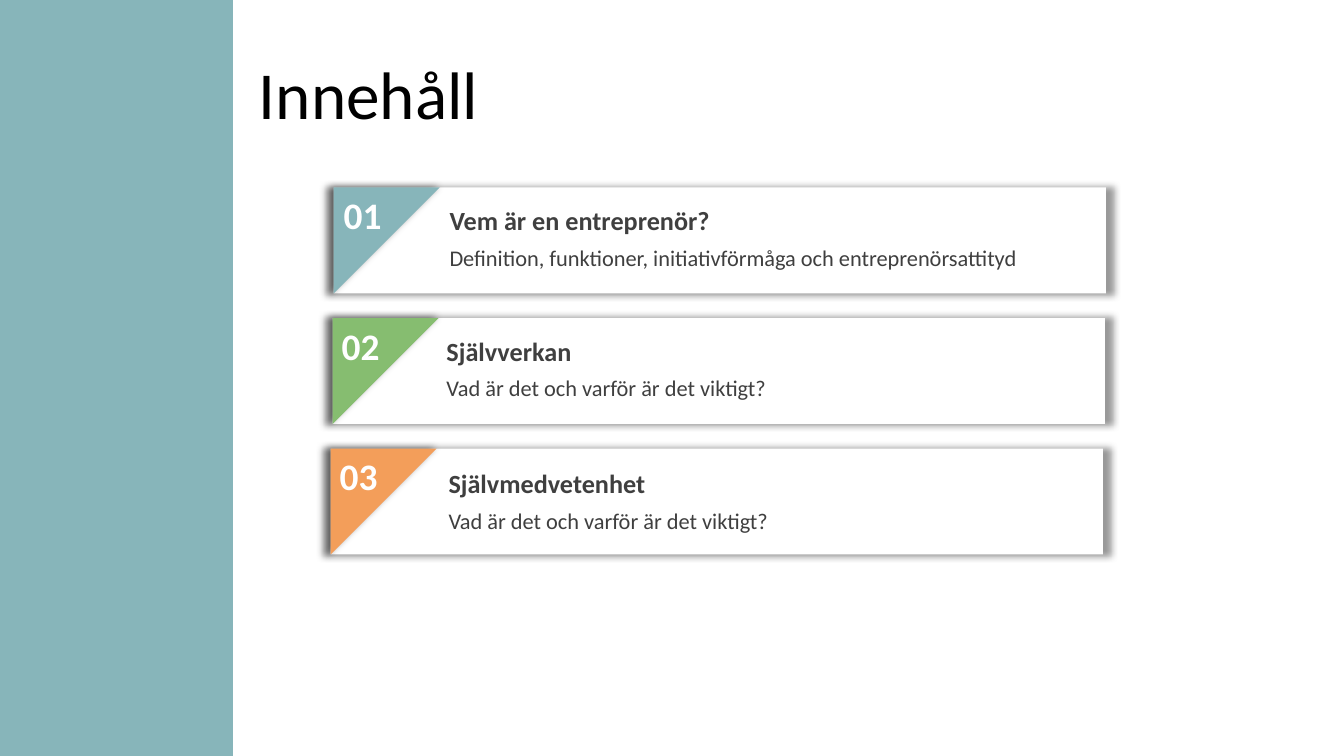
from lxml.etree import SubElement
from pptx import Presentation
from pptx.dml.color import RGBColor
from pptx.enum.shapes import MSO_SHAPE
from pptx.enum.text import MSO_ANCHOR, MSO_AUTO_SIZE
from pptx.oxml.ns import qn
from pptx.util import Inches, Pt

deck = Presentation()
deck.slide_width = Inches(13.33)
deck.slide_height = Inches(7.5)
slide = deck.slides.add_slide(deck.slide_layouts[6])


def add_block(kind, left, top, width, height, color, glow=True):
    block = slide.shapes.add_shape(
        kind, Inches(left), Inches(top), Inches(width), Inches(height))
    block.fill.solid()
    block.fill.fore_color.rgb = RGBColor.from_string(color)
    block.line.fill.background()
    block.shadow.inherit = False
    if glow:
        effects = block._element.spPr.find(qn("a:effectLst"))
        shade = SubElement(effects, qn("a:outerShdw"), blurRad=str(Pt(5)),
                           sx="102000", sy="102000", algn="ctr", rotWithShape="0")
        black = SubElement(shade, qn("a:srgbClr"), val="000000")
        SubElement(black, qn("a:alpha"), val="40000")
    return block


def add_label(words, left, top, width, height, size, color, bold=False):
    label = slide.shapes.add_textbox(
        Inches(left), Inches(top), Inches(width), Inches(height))
    frame = label.text_frame
    frame.word_wrap = True
    frame.text = words
    font = frame.paragraphs[0].runs[0].font
    font.name = "Calibri"
    font.size = Pt(size)
    font.bold = bold
    font.color.rgb = RGBColor.from_string(color)
    return frame


add_block(MSO_SHAPE.RECTANGLE, 0, 0, 2.31, 7.5, "87B5BA", glow=False)
title = add_label("Innehåll", 2.47, 0.5, 9.61, 0.84, 48, "000000")
title.vertical_anchor = MSO_ANCHOR.MIDDLE

first_row, row_pitch = 1.86, 1.295
card_width, card_height = 7.66, 1.05
question = "Vad är det och varför är det viktigt?"
chapters = [
    ("Vem är en entreprenör?",
     "Definition, funktioner, initiativförmåga och entreprenörsattityd",
     "87B5BA", 3.31, 4.36, 0.12),
    ("Självverkan", question, "86BD70", 3.3, 4.33, 0.12),
    ("Självmedvetenhet", question, "F39E5A", 3.28, 4.35, 0.14),
]

for row, (heading, detail, color, card_left, text_left, inset) in enumerate(chapters):
    top = first_row + row * row_pitch
    add_block(MSO_SHAPE.RECTANGLE, card_left, top, card_width, card_height, "FFFFFF")
    corner = add_block(MSO_SHAPE.RIGHT_TRIANGLE, card_left, top,
                       card_height, card_height, color)
    corner.rotation = 90
    number = add_label(f"{row + 1:02}", card_left - 0.01 * (row > 0), top,
                       0.78, 0.55, 26.7, "FFFFFF", True)
    summary = add_label(heading, text_left, top + inset, 6.41, 0.42, 18.7, "3F3F3F", True)
    explanation = add_label(detail, text_left, top + inset + 0.39, 6.41, 0.37, 16, "3F3F3F")
    for frame in (number, summary, explanation):
        frame.auto_size = MSO_AUTO_SIZE.SHAPE_TO_FIT_TEXT

deck.save("out.pptx")
